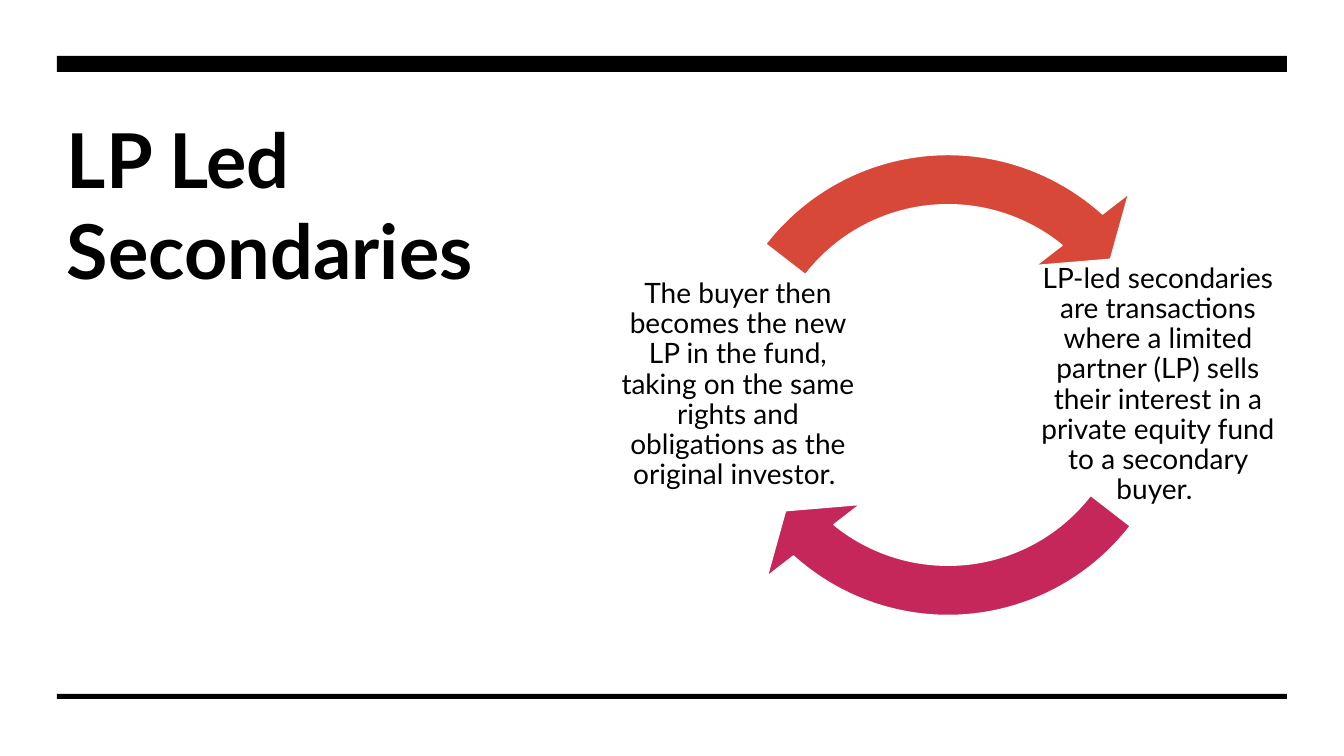
"""Build the LP Led Secondaries slide."""
from pptx import Presentation
from pptx.dml.color import RGBColor
from pptx.enum.shapes import MSO_SHAPE
from pptx.enum.text import MSO_ANCHOR, PP_ALIGN
from pptx.util import Pt

RECT, ARROW = MSO_SHAPE.RECTANGLE, MSO_SHAPE.CIRCULAR_ARROW
TOP, MIDDLE = MSO_ANCHOR.TOP, MSO_ANCHOR.MIDDLE
LEFT, CENTER = PP_ALIGN.LEFT, PP_ALIGN.CENTER

COLORS = {"white": "FFFFFF", "black": "000000", "pink": "C5275A", "red": "D74839"}
FONT = "Lato"
WIDE, HIGH = 1344, 756
EDGE, SPAN = 57, 1230
TITLE = "LP Led Secondaries"
BARS = [(56, 16), (694, 5)]
MID_X, MID_Y, RING, SIDE, REACH = 948, 385, 528, 257, 210
STEPS = [
    ("LP-led secondaries are transactions where a limited partner (LP) sells "
     "their interest in a private equity fund to a secondary buyer. ", 1, "pink", 22.64),
    ("The buyer then becomes the new LP in the fund, taking on the same rights "
     "and obligations as the original investor. ", -1, "red", 130.64),
]
SWEEP = 55.87


def px(num):
    return round(num * 914400 / 100.8)


def color(name):
    return RGBColor.from_string(COLORS[name])


def add_shape(slide, kind, box, fill):
    shape = slide.shapes.add_shape(kind, *map(px, box))
    shape.shadow.inherit = False
    shape.fill.solid()
    shape.fill.fore_color.rgb = color(fill)
    shape.line.fill.background()
    return shape


def add_text(slide, box, text, size, bold, align, anchor, pads, pitch):
    frame = slide.shapes.add_textbox(*map(px, box)).text_frame
    frame.word_wrap = True
    frame.vertical_anchor = anchor
    frame.margin_left = frame.margin_right = px(pads[0])
    frame.margin_top = frame.margin_bottom = px(pads[1])
    para = frame.paragraphs[0]
    para.alignment = align
    para.line_spacing = pitch
    run = para.add_run()
    run.text = text
    font = run.font
    font.name, font.size, font.bold = FONT, Pt(size), bold
    font.color.rgb = color("black")


def add_arrow(slide, fill, start):
    box = (MID_X - RING / 2, MID_Y - RING / 2, RING, RING)
    arrow = add_shape(slide, ARROW, box, fill)
    arrow.line.color.rgb = color("white")
    arrow.line.width = Pt(1)
    for spot, value in enumerate((0.095, 6.849, start + SWEEP, start, 0.111)):
        arrow.adjustments[spot] = value


def main():
    deck = Presentation()
    deck.slide_width, deck.slide_height = px(WIDE), px(HIGH)
    slide = deck.slides.add_slide(deck.slide_layouts[6])
    add_shape(slide, RECT, (0, 0, WIDE, HIGH), "white")
    add_text(slide, (EDGE, 108, 473, 371), TITLE, 54, True, LEFT, TOP, (10, 5), 1.0)
    for top, high in BARS:
        add_shape(slide, RECT, (EDGE, top, SPAN, high), "black")
    for text, way, fill, start in STEPS:
        left = MID_X + way * REACH - SIDE / 2
        box = (left, MID_Y - SIDE / 2, SIDE, SIDE)
        add_text(slide, box, text, 20, False, CENTER, MIDDLE, (3, 3), 0.9)
        add_arrow(slide, fill, start)
    deck.save("out.pptx")


if __name__ == "__main__":
    main()
